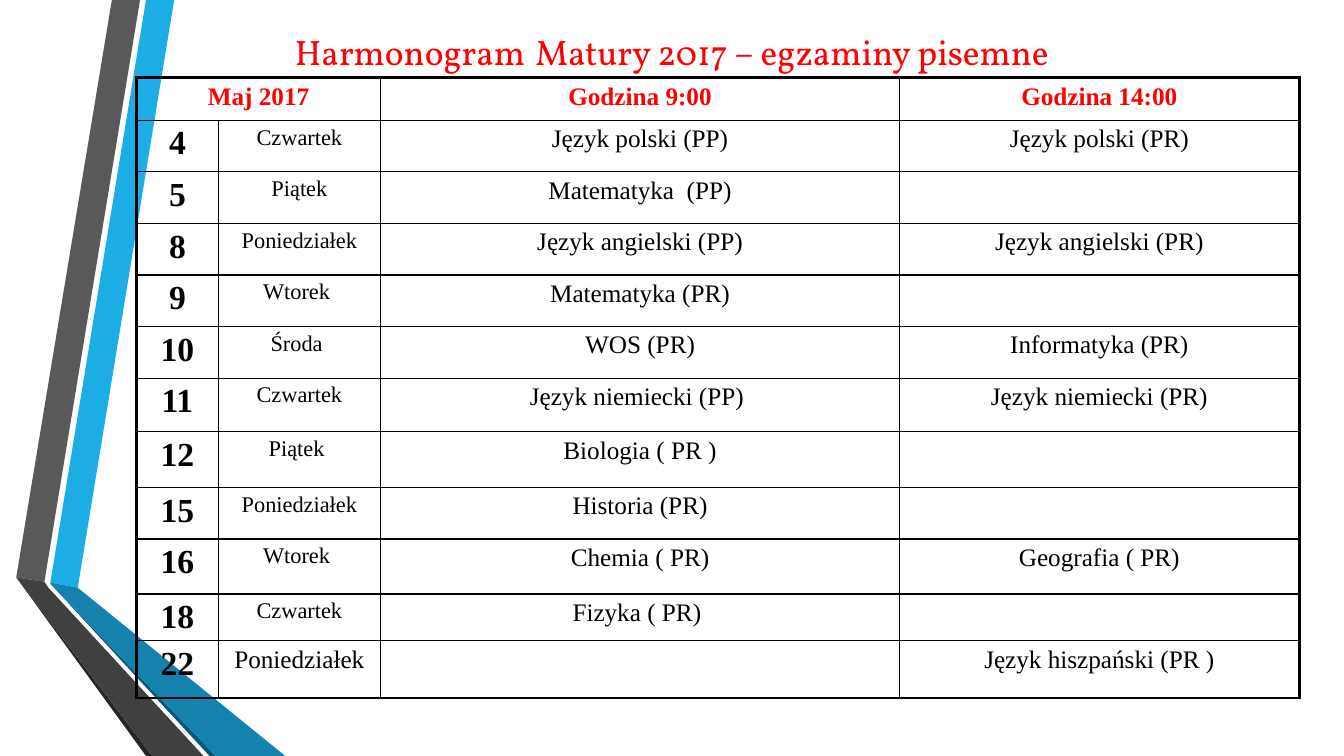
from lxml.etree import SubElement
from pptx import Presentation
from pptx.dml.color import RGBColor
from pptx.enum.text import MSO_ANCHOR, MSO_AUTO_SIZE, PP_ALIGN
from pptx.oxml.ns import qn
from pptx.util import Cm, Pt

RED = RGBColor(0xFF, 0x00, 0x00)
BLACK = RGBColor(0x00, 0x00, 0x00)
BLUE = RGBColor(0x1C, 0xAD, 0xE4)
TEAL = RGBColor(0x14, 0x82, 0xAC)
NAVY = RGBColor(0x0E, 0x57, 0x72)
GREY = RGBColor(0x59, 0x59, 0x59)
CHARCOAL = RGBColor(0x40, 0x40, 0x40)
DARK = RGBColor(0x26, 0x26, 0x26)
TITLE_FONT, TABLE_FONT = "Vollkorn", "Times New Roman"

# Content
TITLE_RUNS = [("Harmonogram", 25.2), (" ", 36),
              ("Matury 2017 – egzaminy pisemne", 25.2)]
HEADER = ("Maj 2017", "", "Godzina 9:00", "Godzina 14:00")
EXAMS = [
    ("4", "Czwartek", "Język polski (PP)", "Język polski (PR)"),
    ("5", "Piątek", "Matematyka  (PP)", ""),
    ("8", "Poniedziałek", "Język angielski (PP)", "Język angielski (PR)"),
    ("9", "Wtorek ", "Matematyka (PR)", ""),
    ("10", "Środa ", "WOS (PR)", "Informatyka (PR)"),
    ("11", "Czwartek", "Język niemiecki (PP) ", "Język niemiecki (PR)"),
    ("12", "Piątek ", "Biologia ( PR )", ""),
    ("15", "Poniedziałek", "Historia (PR)", ""),
    ("16", "Wtorek ", "Chemia ( PR)", "Geografia ( PR)"),
    ("18", "Czwartek", "Fizyka ( PR) ", ""),
    ("22", "Poniedziałek", "", "Język hiszpański (PR )"),
]
COL_WIDTHS = [2.06, 4.09, 13.08, 10.07]
ROW_HEIGHTS = [1.07] + [1.3] * 5 + [1.35, 1.41, 1.29, 1.39, 1.18, 1.44]
COL_SIZES = [24, 16, 18, 18]

# Folded ribbons on the left, corner points in cm
RIBBONS = [
    (BLUE, [(1.27, 14.68), (1.96, 14.81), (4.39, 0), (3.68, 0)]),
    (GREY, [(3.53, 0), (2.82, 0), (0.41, 14.55), (1.12, 14.66)]),
    (DARK, [(0.41, 14.55), (3.68, 19.05), (3.84, 19.05)]),
    (NAVY, [(1.27, 14.71), (5.28, 19.05), (5.44, 19.05)]),
    (TEAL, [(1.27, 14.68), (1.27, 14.71), (5.44, 19.05), (7.19, 19.05),
            (1.96, 14.81)]),
    (CHARCOAL, [(5.13, 19.05), (1.22, 14.81), (1.12, 14.66), (0.41, 14.55),
                (3.84, 19.05)]),
]


def add_run(p, text, font, size, color, bold=False):
    r = p.add_run()
    r.text = text
    r.font.name = font
    r.font.size = Pt(size)
    r.font.bold = bold
    r.font.color.rgb = color


def add_ribbon(shapes, color, points):
    start, *rest = [(Cm(x), Cm(y)) for x, y in points]
    builder = shapes.build_freeform(*start)
    builder.add_line_segments(rest, close=True)
    sp = builder.convert_to_shape()
    sp.shadow.inherit = False
    sp.fill.solid()
    sp.fill.fore_color.rgb = color
    sp.line.fill.background()


def set_borders(cell, widths):
    tc_pr = cell._tc.get_or_add_tcPr()
    for side, width in widths.items():
        ln = SubElement(tc_pr, qn(f"a:ln{side}"), w=str(Pt(width)))
        fill = SubElement(ln, qn("a:solidFill"))
        SubElement(fill, qn("a:srgbClr"), val=str(BLACK))


prs = Presentation()
prs.slide_width, prs.slide_height = Cm(33.87), Cm(19.05)
slide = prs.slides.add_slide(prs.slide_layouts[5])

# Title, clear of the table's top border
title = slide.shapes.title
title.left, title.top, title.width, title.height = (
    Cm(2.54), Cm(0.63), Cm(28.78), Cm(1))
tf = title.text_frame
tf.auto_size = MSO_AUTO_SIZE.NONE
tf.vertical_anchor = MSO_ANCHOR.MIDDLE
tf.margin_top = tf.margin_bottom = 0
p = tf.paragraphs[0]
p.alignment = PP_ALIGN.CENTER
for text, size in TITLE_RUNS:
    add_run(p, text, TITLE_FONT, size, RED)

# Ribbons
for color, points in RIBBONS:
    add_ribbon(slide.shapes, color, points)

# Exam table
rows = [HEADER] + EXAMS
last_row, last_col = len(rows) - 1, len(HEADER) - 1
table = slide.shapes.add_table(
    len(rows), len(HEADER), Cm(3.44), Cm(1.96),
    Cm(sum(COL_WIDTHS)), Cm(sum(ROW_HEIGHTS))).table
table.first_row = table.horz_banding = False
for column, width in zip(table.columns, COL_WIDTHS):
    column.width = Cm(width)
for row, height in zip(table.rows, ROW_HEIGHTS):
    row.height = Cm(height)
table.cell(0, 0).merge(table.cell(0, 1))

for i, texts in enumerate(rows):
    for j, text in enumerate(texts):
        cell = table.cell(i, j)
        set_borders(cell, {"L": 2.25 if j == 0 else 1,
                           "R": 2.25 if j == last_col else 1,
                           "T": 2.25 if i == 0 else 1,
                           "B": 1})
        cell.fill.background()
        cell.margin_left = cell.margin_right = Cm(0.33)
        cell.margin_top = cell.margin_bottom = Cm(0.12)
        if not text:
            continue
        p = cell.text_frame.paragraphs[0]
        p.alignment = PP_ALIGN.CENTER
        size = 18 if i in (0, last_row) and j else COL_SIZES[j]
        if i == 0:
            add_run(p, text, TABLE_FONT, 18, RED, bold=True)
        else:
            add_run(p, text, TABLE_FONT, size, BLACK, bold=j == 0)

prs.save("out.pptx")
